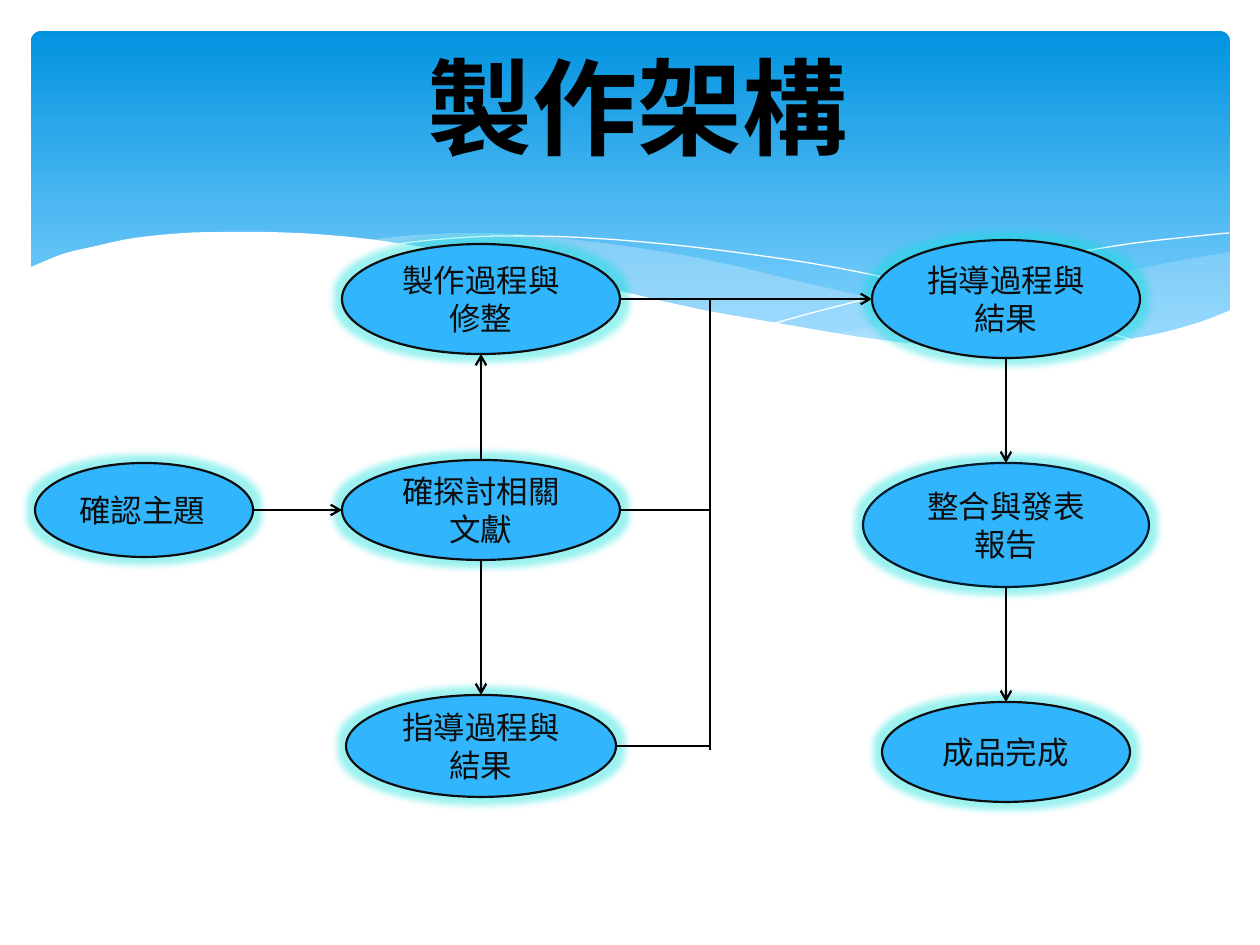
from dataclasses import dataclass
from typing import Optional

import pptx
import pptx.dml.color
import pptx.enum.shapes
import pptx.enum.text
import pptx.oxml.ns
import pptx.util
from lxml import etree

PX_PER_INCH = 126
BODY_FONT = "Calibri"
TITLE_FONT = "Noto Sans CJK SC"
COLORS = {
    "black": "000000", "ink": "0D0D0D", "navy": "021B2B", "white": "FFFFFF",
    "node": "31B6FD", "glow": "05E0DB", "wave": "C6E7FC",
    "sky_top": "0293E0", "sky_bottom": "83D3FE",
}
ALIGN = pptx.enum.text.PP_ALIGN
TOP, LEFT, BOTTOM, RIGHT = range(4)

Point = tuple[float, float]


@dataclass(frozen=True)
class Node:
    text: str
    center_x: int
    center_y: int
    width: int
    height: int
    line: str = "ink"
    align: ALIGN = ALIGN.CENTER


@dataclass(frozen=True)
class Link:
    source: str
    source_side: int
    target: str
    target_side: int


@dataclass(frozen=True)
class Wave:
    curves: list[list[Point]]
    fill: Optional[str] = None
    opacity: int = 100


NODES = {
    "topic": Node("確認主題", 144, 510, 218, 94, align=ALIGN.LEFT),
    "making": Node("製作過程與修整", 481, 299, 278, 110),
    "literature": Node("確探討相關文獻", 481, 510, 278, 100),
    "guidance": Node("指導過程與結果", 481, 746, 270, 102),
    "result": Node("指導過程與結果", 1006, 299, 268, 118),
    "report": Node("整合與發表報告", 1006, 525, 286, 124, line="navy"),
    "finished": Node("成品完成", 1006, 752, 248, 100),
}
LINKS = [
    Link("making", RIGHT, "result", LEFT),
    Link("literature", TOP, "making", BOTTOM),
    Link("literature", BOTTOM, "guidance", TOP),
    Link("result", BOTTOM, "report", TOP),
    Link("report", BOTTOM, "finished", TOP),
    Link("topic", RIGHT, "literature", LEFT),
]
BUS_X, BUS_TOP, BUS_BOTTOM = 710, 299, 750

WAVES = [
    Wave([[(1230, 252), (1178, 261), (1123, 272), (1085, 281), (1014, 299), (949, 312), (833, 334)],
          [(833, 334), (888, 342), (954, 348), (1026, 350), (1087, 347), (1140, 339), (1187, 327),
           (1230, 311)]], "wave", 29),
    Wave([[(1125, 344), (1054, 334), (976, 320), (890, 302), (793, 280), (736, 266), (682, 255),
           (632, 247), (586, 241), (529, 235), (479, 233), (433, 234), (394, 237), (360, 241)],
          [(360, 241), (431, 250), (509, 266), (566, 280), (668, 302), (757, 321), (838, 335),
           (911, 345), (973, 349), (1030, 350), (1081, 349), (1125, 344)]], "wave", 40),
    Wave([[(389, 246), (413, 242), (457, 238), (505, 236), (568, 237), (643, 242), (733, 252),
           (838, 268), (958, 294), (1047, 316), (1143, 343)]]),
    Wave([[(772, 324), (823, 310), (907, 289), (978, 272), (1053, 257), (1128, 244), (1198, 236),
           (1229, 233)]]),
    Wave([[(1231, 310), (1197, 323), (1147, 336), (1087, 344), (1019, 349), (941, 346), (867, 338),
           (789, 325), (699, 309), (599, 286), (563, 277), (492, 260), (428, 248), (368, 239),
           (315, 234), (266, 232), (223, 232), (184, 233), (134, 238), (96, 246), (66, 253),
           (45, 261), (29, 268)],
          [(29, 415), (1231, 415)]], "white"),
]


def px(length: float) -> pptx.util.Emu:
    return pptx.util.Emu(round(length * 914400 / PX_PER_INCH))


def rgb(name: str) -> pptx.dml.color.RGBColor:
    return pptx.dml.color.RGBColor.from_string(COLORS[name])


def add_child(parent, tag: str, **attributes: str):
    child = etree.SubElement(parent, pptx.oxml.ns.qn(tag))
    for name, value in attributes.items():
        child.set(name, value)
    return child


def format_text(shape, size: int, font: str, color: str, align: ALIGN, bold: bool = False) -> None:
    shape.text_frame.word_wrap = True
    shape.text_frame.vertical_anchor = pptx.enum.text.MSO_ANCHOR.MIDDLE
    paragraph = shape.text_frame.paragraphs[0]
    paragraph.alignment = align
    run = paragraph.runs[0]
    run.font.size = pptx.util.Pt(size)
    run.font.name = font
    run.font.bold = bold
    run.font.color.rgb = rgb(color)
    add_child(run.font._element, "a:ea", typeface=font)


def smooth(points: list[Point], steps: int = 4) -> list[Point]:
    """Pass a Catmull-Rom curve through the points."""
    if len(points) < 3:
        return points
    padded = [points[0], *points, points[-1]]
    result = [points[0]]
    for a, b, c, d in zip(padded, padded[1:], padded[2:], padded[3:]):
        for step in range(1, steps + 1):
            t = step / steps
            result.append(tuple(
                (2 * q + (r - p) * t + (2 * p - 5 * q + 4 * r - s) * t**2
                 + (3 * q - p - 3 * r + s) * t**3) / 2
                for p, q, r, s in zip(a, b, c, d)))
    return result


def draw_wave(slide, wave: Wave) -> None:
    points = [(px(x), px(y)) for curve in wave.curves for x, y in smooth(curve)]
    builder = slide.shapes.build_freeform(*points[0])
    builder.add_line_segments(points[1:], close=wave.fill is not None)
    shape = builder.convert_to_shape()
    shape.shadow.inherit = False
    if wave.fill is None:
        shape.fill.background()
        shape.line.color.rgb = rgb("white")
        shape.line.width = 0
        return
    shape.fill.solid()
    shape.fill.fore_color.rgb = rgb(wave.fill)
    shape.line.fill.background()
    if wave.opacity < 100:
        color = shape._element.spPr.find(".//" + pptx.oxml.ns.qn("a:srgbClr"))
        add_child(color, "a:alpha", val=str(wave.opacity * 1000))


def draw_node(slide, node: Node):
    shape = slide.shapes.add_shape(
        pptx.enum.shapes.MSO_SHAPE.OVAL,
        px(node.center_x - node.width / 2), px(node.center_y - node.height / 2),
        px(node.width), px(node.height))
    shape.fill.solid()
    shape.fill.fore_color.rgb = rgb("node")
    shape.line.color.rgb = rgb(node.line)
    shape.line.width = pptx.util.Pt(1.25)
    shape.shadow.inherit = False
    effects = shape._element.spPr.find(pptx.oxml.ns.qn("a:effectLst"))
    glow = add_child(effects, "a:glow", rad=str(pptx.util.Pt(8)))
    color = add_child(glow, "a:srgbClr", val=COLORS["glow"])
    add_child(color, "a:alpha", val="40000")
    shape.text_frame.text = node.text
    format_text(shape, 18, BODY_FONT, "ink", node.align)
    return shape


def draw_line(slide, start: Point = (0, 0), end: Point = (0, 0), source=None, target=None,
              arrow: bool = False) -> None:
    """Draw a line; source and target are (oval, side) pairs that replace start and end."""
    connector = slide.shapes.add_connector(
        pptx.enum.shapes.MSO_CONNECTOR.STRAIGHT, *map(px, start + end))
    if source:
        connector.begin_connect(*source)
    if target:
        connector.end_connect(*target)
    # An oval has eight sites, so each side's number is doubled
    for site in connector._element.iter(pptx.oxml.ns.qn("a:stCxn"), pptx.oxml.ns.qn("a:endCxn")):
        site.set("idx", str(int(site.get("idx")) * 2))
    connector.line.color.rgb = rgb("black")
    connector.line.width = pptx.util.Pt(1.25)
    if arrow:
        add_child(connector.line._get_or_add_ln(), "a:tailEnd", type="arrow")
    add_child(connector._element.spPr, "a:effectLst")


def main() -> None:
    presentation = pptx.Presentation()
    presentation.slide_width, presentation.slide_height = px(1260), px(945)
    slide = presentation.slides.add_slide(presentation.slide_layouts[6])

    # Sky banner and waves
    banner = slide.shapes.add_shape(
        pptx.enum.shapes.MSO_SHAPE.ROUNDED_RECTANGLE, px(31), px(31), px(1199), px(340))
    banner.adjustments[0] = 0.03
    banner.shadow.inherit = False
    banner.line.fill.background()
    banner.fill.gradient()
    banner.fill.gradient_angle = 270
    for stop, color, position in zip(banner.fill.gradient_stops, ("sky_top", "sky_bottom"), (0, 0.9)):
        stop.color.rgb = rgb(color)
        stop.position = position
    for wave in WAVES:
        draw_wave(slide, wave)

    # Title
    title = slide.shapes.add_textbox(px(123), px(26), px(1029), px(158))
    title.text_frame.text = "製作架構"
    format_text(title, 60, TITLE_FONT, "black", ALIGN.CENTER, bold=True)

    # Flow chart
    ovals = {name: draw_node(slide, node) for name, node in NODES.items()}
    for link in LINKS:
        draw_line(slide, source=(ovals[link.source], link.source_side),
                  target=(ovals[link.target], link.target_side), arrow=True)
    draw_line(slide, (BUS_X, BUS_TOP), (BUS_X, BUS_BOTTOM))
    for name in ("literature", "guidance"):
        draw_line(slide, end=(BUS_X, NODES[name].center_y), source=(ovals[name], RIGHT))

    presentation.save("out.pptx")


if __name__ == "__main__":
    main()
